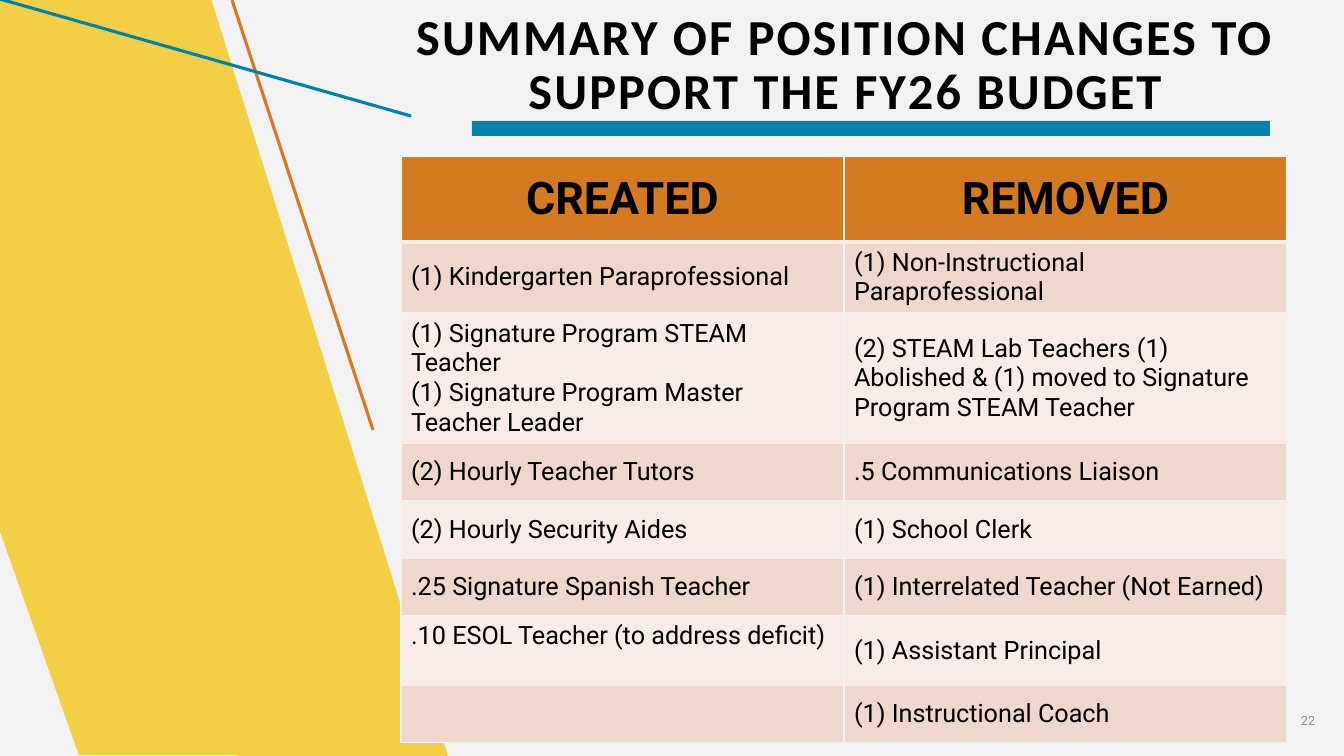
import lxml.etree
import pptx
import pptx.dml.color
import pptx.enum.shapes
import pptx.enum.text
import pptx.oxml.ns
import pptx.util

RGBColor = pptx.dml.color.RGBColor
Align = pptx.enum.text.PP_ALIGN
Anchor = pptx.enum.text.MSO_ANCHOR
Preset = pptx.enum.shapes.MSO_SHAPE

EMU_PER_PX = 914400 / 100.8

BLACK = RGBColor(0x00, 0x00, 0x00)
GRAY = RGBColor(0x8C, 0x8C, 0x8C)
PAPER = RGBColor(0xF2, 0xF2, 0xF2)
YELLOW = RGBColor(0xF3, 0xCF, 0x45)
ORANGE = RGBColor(0xD4, 0x7B, 0x22)
BLUE = RGBColor(0x00, 0x83, 0xA9)
ROW_DARK = RGBColor(0xEF, 0xD7, 0xCD)
ROW_LIGHT = RGBColor(0xF7, 0xEC, 0xE8)

POSITION_CHANGES = [
    ("CREATED", "REMOVED"),
    ("(1) Kindergarten Paraprofessional", "(1) Non-Instructional Paraprofessional"),
    ("(1) Signature Program STEAM Teacher\n(1) Signature Program Master Teacher Leader",
     "(2) STEAM Lab Teachers (1) Abolished & (1) moved to Signature Program STEAM Teacher"),
    ("(2) Hourly Teacher Tutors", ".5 Communications Liaison"),
    ("(2) Hourly Security Aides", "(1) School Clerk"),
    (".25 Signature Spanish Teacher", "(1) Interrelated Teacher (Not Earned)"),
    (".10 ESOL Teacher (to address deficit)", "(1) Assistant Principal"),
    ("", "(1) Instructional Coach"),
]
ROW_HEIGHTS = [86, 68, 130, 57, 58, 57, 70, 57]
ESOL_CELL = (6, 0)


def px(length):
    return pptx.util.Emu(round(length * EMU_PER_PX))


def write_text(frame, text, size=18, font="Roboto", color=BLACK, bold=False,
               align=Align.LEFT, line_spacing=None, letter_spacing=None):
    for index, line in enumerate(text.split("\n")):
        paragraph = frame.add_paragraph() if index else frame.paragraphs[0]
        paragraph.alignment = align
        if line_spacing:
            paragraph.line_spacing = line_spacing
        run = paragraph.add_run()
        run.text = line
        run.font.size = pptx.util.Pt(size)
        run.font.name = font
        run.font.bold = bold
        run.font.color.rgb = color
        if letter_spacing:
            run.font._element.set("spc", str(round(letter_spacing * 100)))


class SlideBuilder:
    """Adds styled elements to the current slide, measured in px."""

    def __init__(self, presentation):
        self.slide = presentation.slides.add_slide(presentation.slide_layouts[5])
        self.slide.background.fill.solid()
        self.slide.background.fill.fore_color.rgb = PAPER

    def title(self, text, left, top, width, height):
        title = self.slide.shapes.title
        title.left, title.top = px(left), px(top)
        title.width, title.height = px(width), px(height)
        frame = title.text_frame
        frame.word_wrap = True
        frame.auto_size = pptx.enum.text.MSO_AUTO_SIZE.NONE
        frame.vertical_anchor = Anchor.MIDDLE
        write_text(frame, text, size=36, font="Calibri", bold=True,
                   align=Align.CENTER, line_spacing=0.9, letter_spacing=1.5)

    def shape(self, preset, left, top, width, height, color):
        shape = self.slide.shapes.add_shape(preset, px(left), px(top), px(width), px(height))
        shape.shadow.inherit = False
        shape.fill.solid()
        shape.fill.fore_color.rgb = color
        shape.line.fill.background()
        return shape

    def line(self, start, end, color):
        connector = self.slide.shapes.add_connector(
            pptx.enum.shapes.MSO_CONNECTOR.STRAIGHT, *map(px, start + end))
        connector.line.color.rgb = color
        connector.line.width = pptx.util.Pt(2.25)
        lxml.etree.SubElement(connector._element.spPr, pptx.oxml.ns.qn("a:effectLst"))

    def text_box(self, text, left, top, width, height, **style):
        box = self.slide.shapes.add_textbox(px(left), px(top), px(width), px(height))
        box.text_frame.word_wrap = True
        box.text_frame.vertical_anchor = Anchor.MIDDLE
        write_text(box.text_frame, text, **style)

    def border(self, cell, side, width):
        properties = cell._tc.get_or_add_tcPr()
        line = lxml.etree.SubElement(properties, pptx.oxml.ns.qn("a:" + side),
                                     w=str(pptx.util.Pt(width)))
        fill = lxml.etree.SubElement(line, pptx.oxml.ns.qn("a:solidFill"))
        lxml.etree.SubElement(fill, pptx.oxml.ns.qn("a:srgbClr"), val=str(PAPER))

    def table(self, rows, heights, left, top, column_width):
        columns = len(rows[0])
        table = self.slide.shapes.add_table(
            len(rows), columns, px(left), px(top),
            px(column_width * columns), px(sum(heights))).table
        for column in table.columns:
            column.width = px(column_width)
        for row_index, (texts, height) in enumerate(zip(rows, heights)):
            table.rows[row_index].height = px(height)
            header = row_index == 0
            for column_index, text in enumerate(texts):
                cell = table.cell(row_index, column_index)
                at_top = (row_index, column_index) == ESOL_CELL
                cell.vertical_anchor = Anchor.TOP if at_top else Anchor.MIDDLE
                for side in ("lnL", "lnR", "lnT", "lnB"):
                    under_header = (row_index, side) in ((0, "lnB"), (1, "lnT"))
                    self.border(cell, side, 3 if under_header else 1)
                cell.fill.solid()
                band = ROW_DARK if row_index % 2 else ROW_LIGHT
                cell.fill.fore_color.rgb = ORANGE if header else band
                if text:
                    write_text(cell.text_frame, text, size=32 if header else 18, bold=header,
                               align=Align.CENTER if header else Align.LEFT)


def main():
    presentation = pptx.Presentation()
    presentation.slide_width, presentation.slide_height = px(1344), px(756)
    builder = SlideBuilder(presentation)

    builder.line((373, 430), (232, 0), ORANGE)
    band = builder.shape(Preset.PARALLELOGRAM, 0, -3, 448, 759, YELLOW)
    band.adjustments[0] = 0.53
    band._element.spPr.get_or_add_xfrm().set("flipH", "1")
    builder.shape(Preset.RIGHT_TRIANGLE, 0, -4, 247, 759, YELLOW)
    builder.shape(Preset.RIGHT_TRIANGLE, 0, 532, 79, 224, PAPER)
    builder.line((411, 116), (0, -1), BLUE)

    builder.title("SUMMARY OF POSITION CHANGES TO SUPPORT THE FY26 BUDGET", 362, 9, 967, 114)
    builder.text_box("22", 1216, 701, 109, 40, size=9, color=GRAY, align=Align.RIGHT)
    builder.shape(Preset.RECTANGLE, 472, 121, 798, 15, BLUE)
    builder.table(POSITION_CHANGES, ROW_HEIGHTS, 401, 156, 443)

    presentation.save("out.pptx")


if __name__ == "__main__":
    main()
